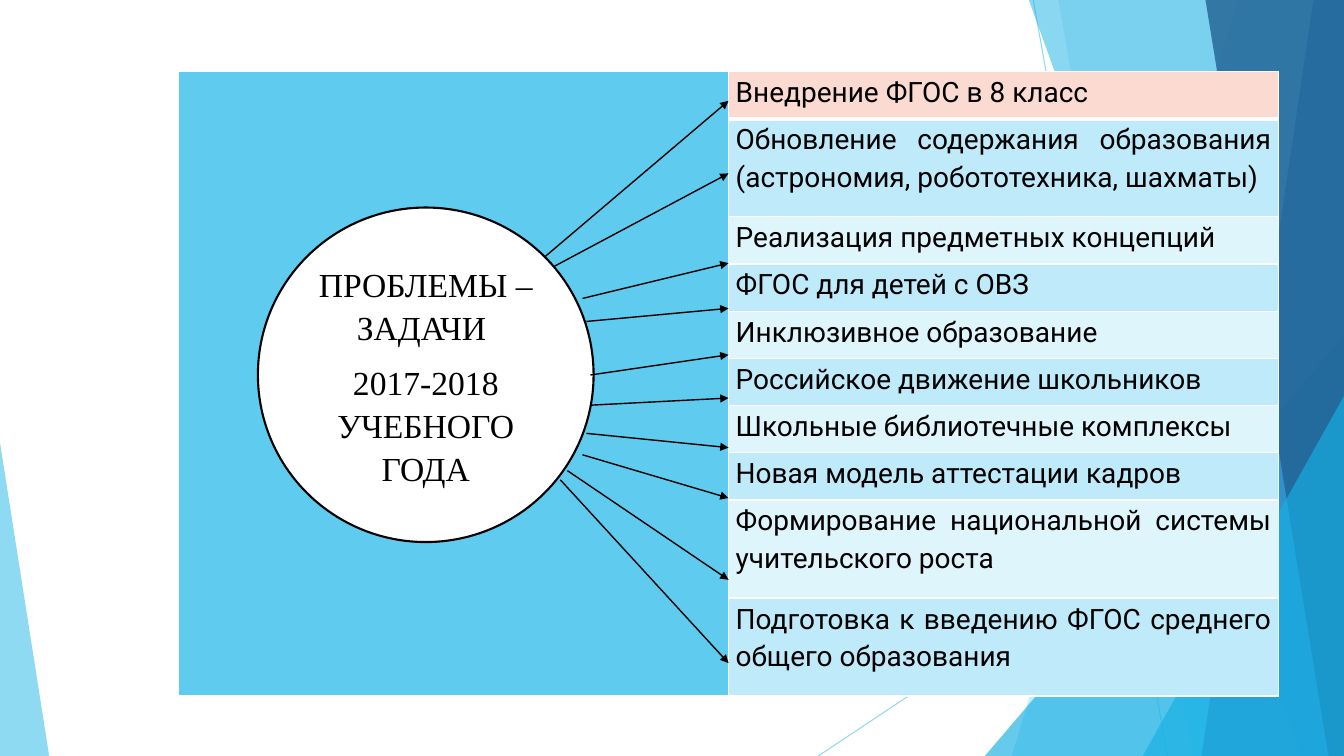
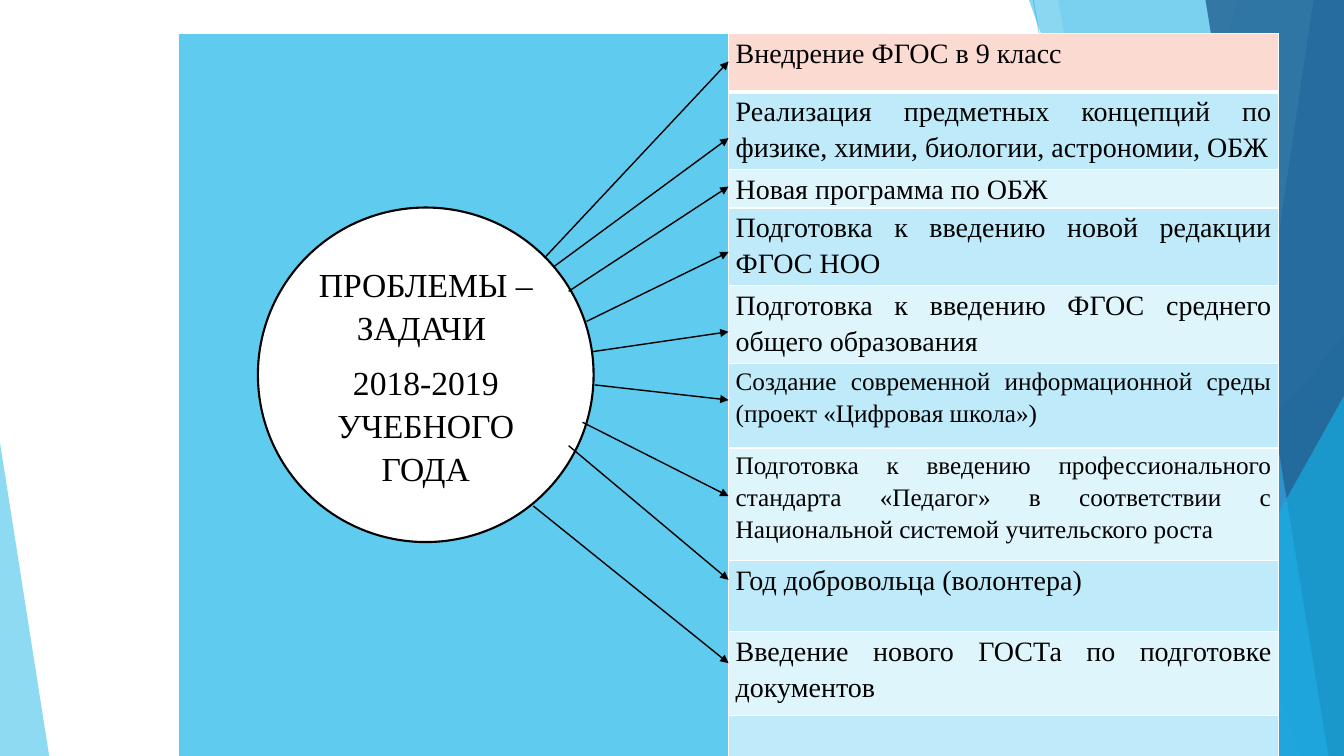
"""Build two slides of school-year goals, each a circle with arrows to a table."""
from typing import NamedTuple

from lxml.etree import SubElement as Sub
from pptx import Presentation
from pptx.dml.color import RGBColor as Rgb
from pptx.enum.shapes import MSO_CONNECTOR as Link, MSO_SHAPE as Kind
from pptx.enum.text import MSO_ANCHOR as Anchor, PP_ALIGN as Align
from pptx.oxml.ns import qn
from pptx.util import Cm, Pt

HUES = {"sky": "5FCBEF", "cyan": "17B0E4", "blue": "2E83C3", "navy": "226292",
        "rose": "FBDAD1", "dark": "BFEAF9", "light": "DFF5FC",
        "white": "FFFFFF", "black": "000000"}
SERIF, SANS = "Times New Roman", "Roboto"
WIDE, HIGH = 33.87, 19.05
LEFT, COL = 4.5, 13.86
TIP = LEFT + COL
ONE, TWO = 1.19, 2.47
PAIR = 1.96


class Row(NamedTuple):
    """A table row: its text, height in cm and text size in points."""
    text: str
    high: float
    size: int = 20


class Ray(NamedTuple):
    """An arrow: its start at the circle and the height of its tip."""
    x: float
    y: float
    tip: float


class Goals(NamedTuple):
    """The content of one slide."""
    years: str
    font: str
    top: float
    rows: list
    rays: list


FIRST = Goals(
    years="2017-2018", font=SANS, top=1.8,
    rows=[
        Row("Внедрение ФГОС в 8 класс", ONE),
        Row("Обновление содержания образования "
            "(астрономия, робототехника, шахматы)", TWO),
        Row("Реализация предметных концепций", ONE),
        Row("ФГОС для детей с ОВЗ", ONE),
        Row("Инклюзивное образование", ONE),
        Row("Российское движение школьников", ONE),
        Row("Школьные библиотечные комплексы", ONE),
        Row("Новая модель аттестации кадров", ONE),
        Row("Формирование национальной системы учительского роста", TWO),
        Row("Подготовка к введению ФГОС среднего общего образования", TWO),
    ],
    rays=[
        Ray(13.72, 6.48, 2.54), Ray(13.97, 6.71, 4.37), Ray(14.68, 7.52, 6.63),
        Ray(14.78, 8.1, 7.77), Ray(14.88, 9.45, 8.94), Ray(14.88, 10.21, 10.03),
        Ray(14.78, 10.92, 11.28), Ray(14.68, 11.46, 12.55),
        Ray(14.3, 11.86, 14.61), Ray(14.12, 12.09, 16.71),
    ])

SECOND = Goals(
    years="2018-2019", font=SERIF, top=0.85,
    rows=[
        Row("Внедрение ФГОС в 9 класс", 1.46),
        Row("Реализация предметных концепций по физике, химии, биологии, "
            "астрономии, ОБЖ", PAIR),
        Row("Новая программа по ОБЖ", 0.97),
        Row("Подготовка к введению новой редакции ФГОС НОО", PAIR),
        Row("Подготовка к введению ФГОС среднего общего образования", PAIR),
        Row("Создание современной информационной среды "
            "(проект «Цифровая школа»)", 2.13, 18),
        Row("Подготовка к введению профессионального стандарта «Педагог» "
            "в соответствии с Национальной системой учительского роста", 2.84, 18),
        Row("Год добровольца (волонтера)", 1.79),
        Row("Введение нового ГОСТа по подготовке документов", 2.11),
        Row("", 1.04),
    ],
    rays=[
        Ray(13.72, 6.5, 1.55), Ray(13.97, 6.71, 3.48), Ray(14.33, 7.34, 4.7),
        Ray(14.78, 8.1, 6.35), Ray(14.94, 8.86, 8.36), Ray(14.99, 9.7, 10.08),
        Ray(14.68, 10.64, 12.5), Ray(14.33, 11.23, 14.61),
        Ray(13.44, 12.75, 16.71),
    ])


def hue(name):
    """Return the named colour."""
    return Rgb.from_string(HUES[name])


def put(frame, *lines, font=SERIF, size=20, align=Align.JUSTIFY, space=1.15, after=0):
    """Write each line as one paragraph in the given format."""
    for num, line in enumerate(lines):
        para = frame.add_paragraph() if num else frame.paragraphs[0]
        para.alignment, para.line_spacing = align, space
        para.space_after = Pt(after)
        run = para.add_run()
        run.text = line
        run.font.name, run.font.size = font, Pt(size)
        run.font.color.rgb = hue("black")


def fade(shape, share):
    """Make the shape's colour opaque to the given percentage."""
    color = shape.element.spPr.find(".//" + qn("a:srgbClr"))
    Sub(color, qn("a:alpha"), val=str(share * 1000))


class Deck:
    """Hold the style and the current slide."""

    def __init__(self):
        self.prs = Presentation()
        self.prs.slide_width, self.prs.slide_height = Cm(WIDE), Cm(HIGH)
        self.base = self.prs.slide_layouts[6]
        self.slide = None

    def page(self):
        """Start a slide; the first one also sets up the shared layout."""
        fresh = self.slide is None
        self.slide = self.prs.slides.add_slide(self.base)
        if fresh:
            self.decor()
            self.share()

    def share(self):
        """Move all shapes of the current slide to the layout."""
        tree = self.base.shapes.element
        for old in list(self.base.placeholders):
            tree.remove(old.element)
        for shape in list(self.slide.shapes):
            tree.append(shape.element)

    def paint(self, shape, name, share=None):
        """Fill the shape without line or shadow."""
        shape.shadow.inherit = False
        shape.fill.solid()
        shape.fill.fore_color.rgb = hue(name)
        shape.line.fill.background()
        if share:
            fade(shape, share)

    def line(self, x, y, to_x, to_y, name="black", width=1):
        """Draw a straight line."""
        line = self.slide.shapes.add_connector(
            Link.STRAIGHT, Cm(x), Cm(y), Cm(to_x), Cm(to_y))
        line.line.color.rgb = hue(name)
        line.line.width = Pt(width)
        Sub(line.element.spPr, qn("a:effectLst"))
        return line

    def arrow(self, ray):
        """Draw an arrow from the circle to the table."""
        line = self.line(ray.x, ray.y, TIP, ray.tip)
        Sub(line.element.spPr.find(qn("a:ln")), qn("a:tailEnd"), type="triangle")

    def band(self, top, low, name, share):
        """Fill from a slanted edge to the right side of the slide."""
        pen = self.slide.shapes.build_freeform(Cm(top), 0)
        pen.add_line_segments(
            [(Cm(x), Cm(y)) for x, y in ((WIDE, 0), (WIDE, HIGH), (low, HIGH))])
        self.paint(pen.convert_to_shape(), name, share)

    def wedge(self, x, y, to_x, peak, name, share):
        """Draw a triangle that stands on the bottom of the slide."""
        shape = self.slide.shapes.add_shape(
            Kind.ISOSCELES_TRIANGLE, Cm(x), Cm(y), Cm(to_x - x), Cm(HIGH - y))
        shape.adjustments[0] = peak
        self.paint(shape, name, share)

    def decor(self):
        """Draw the slanted side panels from back to front."""
        for ends in ((26.04, 0, 29.42, HIGH), (WIDE, 10.24, 20.62, HIGH)):
            fade(self.line(*ends, name="sky", width=0.75), 70)
        self.band(31.19, 25.5, "sky", 36)
        self.band(26.67, 30.05, "sky", 20)
        self.wedge(24.82, 8.46, WIDE, 1, "cyan", 66)
        self.band(25.93, 32.79, "cyan", 50)
        self.band(33.1, 30.28, "blue", 70)
        self.band(30.38, 33.48, "navy", 80)
        self.wedge(28.8, 9.98, WIDE, 1, "cyan", 66)
        self.wedge(0, 11.15, 1.24, 0, "sky", 70)

    def cell(self, cell, name, low=1):
        """Set margins, white borders and fill; low is the bottom width."""
        cell.margin_left = cell.margin_right = Cm(0.18)
        cell.margin_top = cell.margin_bottom = 0
        prop = cell._tc.get_or_add_tcPr()
        for side, width in (("L", 1), ("R", 1), ("T", 1), ("B", low)):
            edge = Sub(prop, qn("a:ln" + side), w=str(Pt(width)))
            Sub(Sub(edge, qn("a:solidFill")), qn("a:srgbClr"), val=HUES["white"])
        cell.fill.solid()
        cell.fill.fore_color.rgb = hue(name)

    def table(self, top, rows, font):
        """Draw one merged left cell beside a column of goals."""
        grid = self.slide.shapes.add_table(
            len(rows), 2, Cm(LEFT), Cm(top), Cm(2 * COL),
            Cm(sum(row.high for row in rows))).table
        grid.first_row = grid.horz_banding = False
        for num, row in enumerate(rows):
            grid.rows[num].height = Cm(row.high)
            side, goal = grid.cell(num, 0), grid.cell(num, 1)
            tone = ("light", "dark")[num % 2] if num else "rose"
            self.cell(side, "sky")
            self.cell(goal, tone, low=1 if num else 3)
            if row.text:
                put(goal.text_frame, row.text, font=font, size=row.size)
        grid.cell(0, 0).merge(grid.cell(len(rows) - 1, 0))

    def disc(self, years):
        """Draw the circle that names the school year."""
        disc = self.slide.shapes.add_shape(
            Kind.OVAL, Cm(6.5), Cm(5.23), Cm(8.46), Cm(8.43))
        self.paint(disc, "white")
        disc.line.color.rgb = hue("black")
        disc.line.width = Pt(1.5)
        frame = disc.text_frame
        frame.word_wrap, frame.vertical_anchor = True, Anchor.MIDDLE
        put(frame, "ПРОБЛЕМЫ – ЗАДАЧИ ", f"{years} УЧЕБНОГО ГОДА",
            size=24, align=Align.CENTER, space=1.07, after=8)

    def show(self, goals):
        """Build one slide of goals."""
        self.page()
        self.table(goals.top, goals.rows, goals.font)
        self.disc(goals.years)
        for ray in goals.rays:
            self.arrow(ray)


def main():
    """Build and save the slides."""
    deck = Deck()
    for goals in (FIRST, SECOND):
        deck.show(goals)
    deck.prs.save("out.pptx")


if __name__ == "__main__":
    main()
